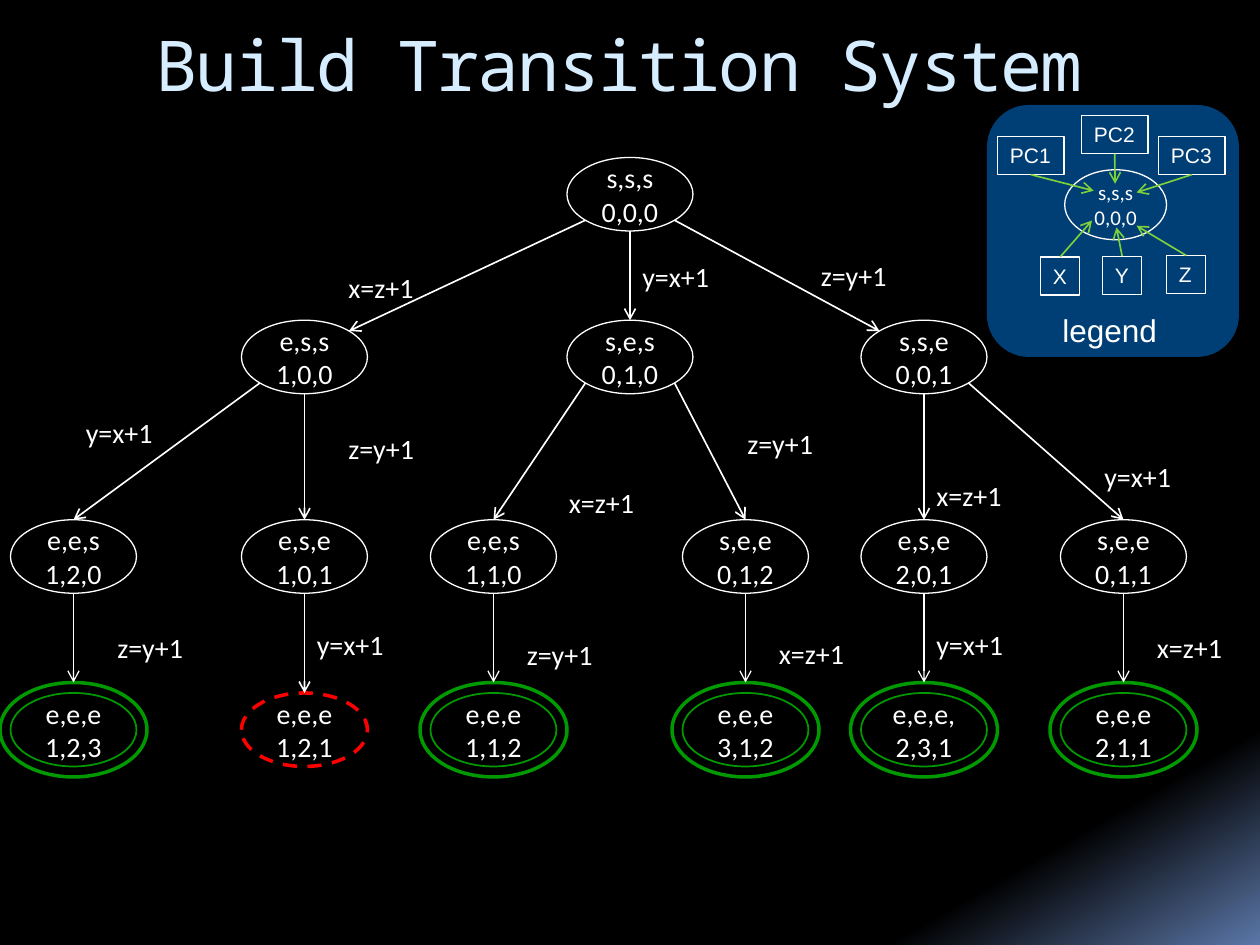
from lxml import etree
from math import sqrt
from pptx import Presentation
from pptx.dml.color import RGBColor
from pptx.enum.dml import MSO_LINE
from pptx.enum.shapes import MSO_CONNECTOR, MSO_SHAPE
from pptx.enum.text import MSO_ANCHOR, PP_ALIGN
from pptx.oxml.ns import qn
from pptx.util import Pt

OVAL, RECT, ROUND = MSO_SHAPE.OVAL, MSO_SHAPE.RECTANGLE, MSO_SHAPE.ROUNDED_RECTANGLE
STRAIGHT, DASH = MSO_CONNECTOR.STRAIGHT, MSO_LINE.DASH
MIDDLE, TOP = MSO_ANCHOR.MIDDLE, MSO_ANCHOR.TOP
CENTER, LEFT = PP_ALIGN.CENTER, PP_ALIGN.LEFT

WHITE, GREEN, RED, LIME = "FFFFFF", "009900", "FF0000", "7FD13B"
NAVY, PALE, BLACK, GLOW = "003F75", "D6ECFF", "000000", "5B77A8"

TITLE = "Build Transition System"
ROWS = [90, 183, 297, 396]
NODE_W, NODE_H, RING_GAP = 72, 42, 6
DIAG = 1 / sqrt(8)  # share of width or height from centre to a diagonal point

# centre x, row, state, parent index, step, step label position
NODES = [
    (360, 0, "s,s,s 0,0,0", None, None, None),
    (174, 1, "e,s,s 1,0,0", 0, "x=z+1", (192, 151)),
    (360, 1, "s,e,s 0,1,0", 0, "y=x+1", (360, 145)),
    (528, 1, "s,s,e 0,0,1", 0, "z=y+1", (462, 144)),
    (42, 2, "e,e,s 1,2,0", 1, "y=x+1", (42, 234)),
    (174, 2, "e,s,e 1,0,1", 1, "z=y+1", (192, 243)),
    (282, 2, "e,e,s 1,1,0", 2, "x=z+1", (318, 274)),
    (426, 2, "s,e,e 0,1,2", 2, "z=y+1", (420, 240)),
    (528, 2, "e,s,e 2,0,1", 3, "x=z+1", (528, 270)),
    (642, 2, "s,e,e 0,1,1", 3, "y=x+1", (624, 259)),
    (42, 3, "e,e,e 1,2,3", 4, "z=y+1", (60, 357)),
    (174, 3, "e,e,e 1,2,1", 5, "y=x+1", (174, 355)),
    (282, 3, "e,e,e 1,1,2", 6, "z=y+1", (294, 361)),
    (426, 3, "e,e,e 3,1,2", 7, "x=z+1", (438, 360)),
    (528, 3, "e,e,e, 2,3,1", 8, "y=x+1", (528, 355)),
    (642, 3, "e,e,e 2,1,1", 9, "x=z+1", (654, 357)),
]
BAD = 11  # the end state drawn with a dashed outline

# text, left, top, width, side the arrow leaves, arrow tip
KEYS = [
    ("X", 594.6, 146.8, 22.5, 0, (624, 126)),
    ("Y", 630, 146.4, 22.5, 0, (638, 130)),
    ("Z", 666.6, 146, 22.5, 0, (649.5, 129)),
    ("PC1", 570, 78, 38, 2, (625, 109)),
    ("PC2", 618, 66, 38, 2, (637.2, 105)),
    ("PC3", 662, 78, 38, 2, (649.5, 110)),
]

prs = Presentation()
prs.slide_width, prs.slide_height = Pt(720), Pt(540)
slide = prs.slides.add_slide(prs.slide_layouts[6])
shapes = slide.shapes


def rgb(code):
    return RGBColor.from_string(code)


def write(shape, words, size, font, color=WHITE, align=LEFT, anchor=TOP, wrap=True):
    """Put each word on its own line of one paragraph."""
    frame = shape.text_frame
    for key, val in {"word_wrap": wrap, "vertical_anchor": anchor}.items():
        setattr(frame, key, val)
    para = frame.paragraphs[0]
    para.alignment = align
    for num, word in enumerate(words):
        if num:
            para.add_line_break()
        run = para.add_run()
        run.text = word
        for key, val in {"size": Pt(size), "name": font}.items():
            setattr(run.font, key, val)
        run.font.color.rgb = rgb(color)
    return run


def draw(kind, x, y, w, h, line=None, width=0.75, fill=None):
    shape = shapes.add_shape(kind, Pt(x), Pt(y), Pt(w), Pt(h))
    shape.shadow.inherit = False
    if fill:
        shape.fill.solid()
        shape.fill.fore_color.rgb = rgb(fill)
    else:
        shape.fill.background()
    if line:
        shape.line.color.rgb = rgb(line)
        shape.line.width = Pt(width)
    else:
        shape.line.fill.background()
    return shape


def label(x, y, w, h, words, *style, **more):
    box = shapes.add_textbox(Pt(x), Pt(y), Pt(w), Pt(h))
    return box, write(box, words, *style, **more)


def arrow(start, end, color=WHITE, width=0.94):
    link = shapes.add_connector(STRAIGHT, *map(Pt, start + end))
    link.line.color.rgb = rgb(color)
    link.line.width = Pt(width)
    etree.SubElement(link.line._get_or_add_ln(), qn("a:tailEnd"), type="arrow")
    etree.SubElement(link._element.spPr, qn("a:effectLst"))
    return link


def rim(x, row, side, end):
    """Point on a node's outline: side -1, 0, 1 and end -1 (top) or 1 (bottom)."""
    reach = DIAG if side else 0.5
    mid = ROWS[row] + NODE_H / 2
    return x + side * DIAG * NODE_W, mid + end * reach * NODE_H


back = slide.background.fill
back.gradient()
back.gradient_angle = 300
for stop, place, color in zip(back.gradient_stops, (0.87, 1), (BLACK, GLOW)):
    stop.position = place
    stop.color.rgb = rgb(color)

draw(ROUND, 564, 60, 144, 144, fill=NAVY)
box, run = label(36, 6, 648, 60, [TITLE], 40, "Noto Sans Mono", PALE, anchor=MIDDLE)
box.text_frame.margin_left = Pt(53)
run.font._element.set("spc", "-100")

last = len(ROWS) - 1
for num, (x, row, state, up, step, spot) in enumerate(NODES):
    left, top = x - NODE_W / 2, ROWS[row]
    ring = row == last and num != BAD
    if ring:
        line, width = GREEN, 1
        draw(OVAL, left - RING_GAP, top - RING_GAP, NODE_W + 2 * RING_GAP,
             NODE_H + 2 * RING_GAP, GREEN, 2)
    else:
        line, width = (RED, 2) if num == BAD else (WHITE, 0.75)
    node = draw(OVAL, left, top, NODE_W, NODE_H, line, width)
    if num == BAD:
        node.line.dash_style = DASH
    write(node, state.split(), 16, "Calibri", align=CENTER, anchor=MIDDLE)
    if up is None:
        continue
    over = NODES[up][0]
    side = (x > over) - (x < over)
    tip, low = rim(x, row, -side if row == 1 else 0, -1)
    arrow(rim(over, row - 1, side, 1), (tip, low - RING_GAP * ring),
          width=0.75 if ring else 0.94)
    label(*spot, 66, 26.6, [step], 16, "Calibri")

core = draw(OVAL, 608.4, 97, 58.2, 40, WHITE)
write(core, NODES[0][2].split(), 12, "Calibri", align=CENTER, anchor=MIDDLE)
for name, x, y, w, side, tip in KEYS:
    key = draw(RECT, x, y, w, 21.8, WHITE)
    write(key, [name], 12, "Arial", wrap=False)
    arrow((x, y), tip, LIME).begin_connect(key, side)
label(600, 174, 69, 29, ["legend"], 18, "Arial", wrap=False)

prs.save("out.pptx")
